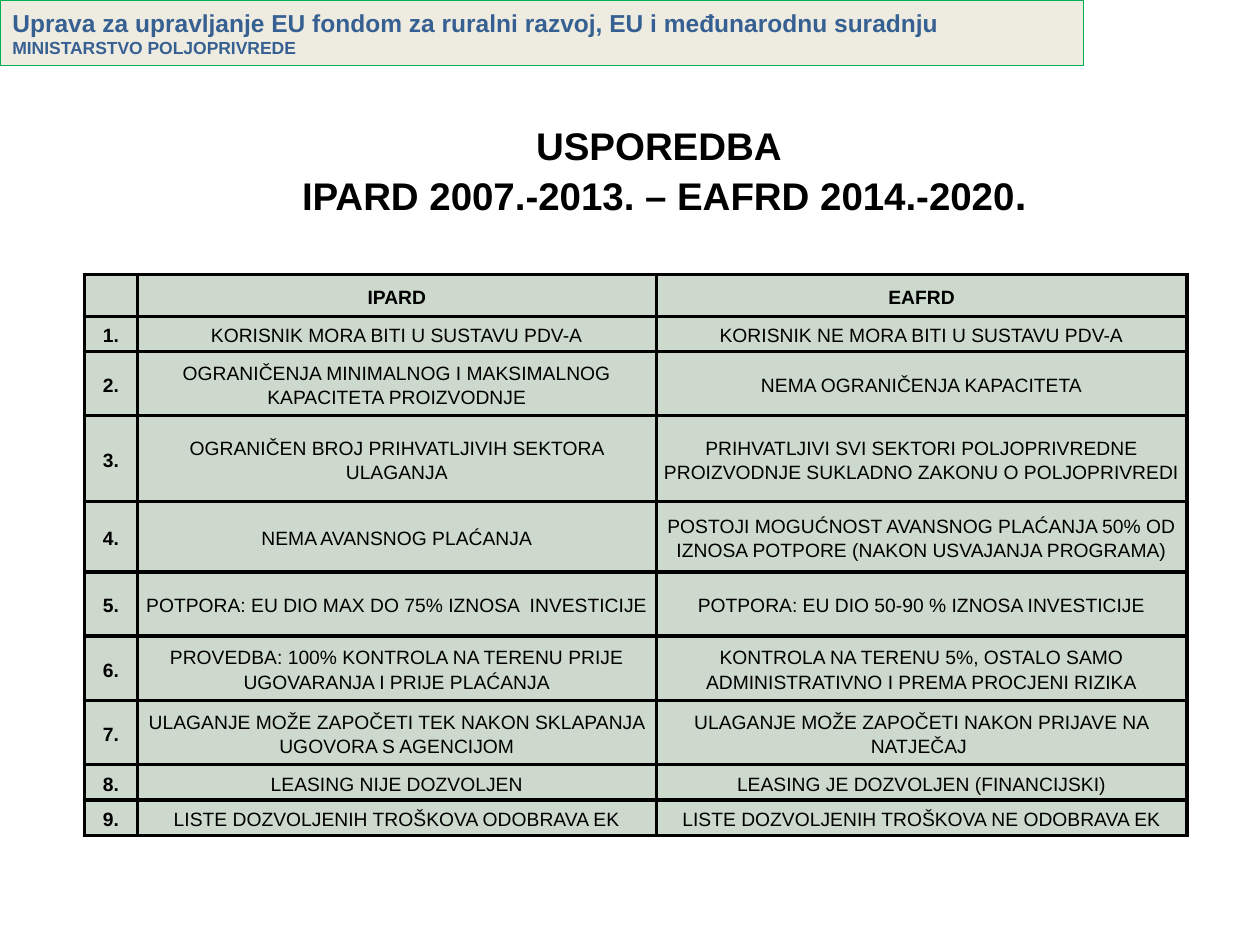
from pptx import Presentation
from pptx.dml.color import RGBColor
from pptx.enum.shapes import MSO_SHAPE
from pptx.enum.text import MSO_ANCHOR, PP_ALIGN
from pptx.oxml import parse_xml
from pptx.oxml.ns import nsdecls
from pptx.util import Inches, Pt


def color(value):
    return RGBColor.from_string(value)


def style(font, size, value, bold):
    font.name = "Arial"
    font.size = Pt(size)
    font.bold = bold
    font.color.rgb = color(value)


prs = Presentation()
prs.slide_width = Inches(10)
prs.slide_height = Inches(7.5)
slide = prs.slides.add_slide(prs.slide_layouts[6])

banner = slide.shapes.add_shape(MSO_SHAPE.RECTANGLE, 0, 0, Inches(8.6), Inches(0.52))
banner.shadow.inherit = False
banner.fill.solid()
banner.fill.fore_color.rgb = color("EEECE1")
banner.line.color.rgb = color("00B050")
banner.line.width = Pt(0.75)
banner.text_frame.vertical_anchor = MSO_ANCHOR.MIDDLE
banner.text_frame.text = (
    "Uprava za upravljanje EU fondom za ruralni razvoj, EU i međunarodnu suradnju\n"
    "MINISTARSTVO POLJOPRIVREDE"
)
for paragraph, size in zip(banner.text_frame.paragraphs, (14, 10)):
    paragraph.alignment = PP_ALIGN.LEFT
    style(paragraph.font, size, "376092", True)

title = slide.shapes.add_textbox(Inches(1.61), Inches(0.92), Inches(7.24), Inches(0.88))
title.text_frame.word_wrap = True
heading = title.text_frame.paragraphs[0]
heading.alignment = PP_ALIGN.CENTER
style(heading.font, 24, "000000", True)
first_line = heading.add_run()
first_line.text = "USPOREDBA"
heading.add_line_break()
second_line = heading.add_run()
second_line.text = " IPARD 2007.-2013. – EAFRD 2014.-2020"
for run in (first_line, second_line):
    run.font.size = Pt(22)
heading.add_run().text = "."

comparison = [
    ("IPARD", "EAFRD"),
    ("KORISNIK MORA BITI U SUSTAVU PDV-A", "KORISNIK NE MORA BITI U SUSTAVU PDV-A"),
    ("OGRANIČENJA MINIMALNOG I MAKSIMALNOG KAPACITETA PROIZVODNJE",
     "NEMA OGRANIČENJA KAPACITETA"),
    ("OGRANIČEN BROJ PRIHVATLJIVIH SEKTORA ULAGANJA",
     "PRIHVATLJIVI SVI SEKTORI POLJOPRIVREDNE PROIZVODNJE SUKLADNO ZAKONU O POLJOPRIVREDI"),
    ("NEMA AVANSNOG PLAĆANJA",
     "POSTOJI MOGUĆNOST AVANSNOG PLAĆANJA 50% OD IZNOSA POTPORE (NAKON USVAJANJA PROGRAMA)"),
    ("POTPORA: EU DIO MAX DO 75% IZNOSA  INVESTICIJE",
     "POTPORA: EU DIO 50-90 % IZNOSA INVESTICIJE"),
    ("PROVEDBA: 100% KONTROLA NA TERENU PRIJE UGOVARANJA I PRIJE PLAĆANJA",
     "KONTROLA NA TERENU 5%, OSTALO SAMO ADMINISTRATIVNO I PREMA PROCJENI RIZIKA"),
    ("ULAGANJE MOŽE ZAPOČETI TEK NAKON SKLAPANJA UGOVORA S AGENCIJOM",
     "ULAGANJE MOŽE ZAPOČETI NAKON PRIJAVE NA NATJEČAJ "),
    ("LEASING NIJE DOZVOLJEN", "LEASING JE DOZVOLJEN (FINANCIJSKI)"),
    ("LISTE DOZVOLJENIH TROŠKOVA ODOBRAVA EK",
     "LISTE DOZVOLJENIH TROŠKOVA NE ODOBRAVA EK"),
]
column_widths = (0.42, 4.12, 4.21)
row_heights = (0.33, 0.28, 0.51, 0.68, 0.56, 0.51, 0.51, 0.51, 0.28, 0.28)

table = slide.shapes.add_table(
    len(comparison), len(column_widths),
    Inches(0.67), Inches(2.18), Inches(8.75), Inches(4.47),
).table
for column, width in zip(table.columns, column_widths):
    column.width = Inches(width)
for row, height in zip(table.rows, row_heights):
    row.height = Inches(height)

for r, programmes in enumerate(comparison):
    number = f"{r}." if r else ""
    for c, text in enumerate((number, *programmes)):
        cell = table.cell(r, c)
        cell.margin_left = cell.margin_right = cell.margin_top = Inches(0.01)
        cell.margin_bottom = 0
        cell.vertical_anchor = MSO_ANCHOR.MIDDLE
        cell.text = text
        entry = cell.text_frame.paragraphs[0]
        entry.alignment = PP_ALIGN.CENTER
        entry.line_spacing = 1.15
        if c == 0 and r >= 4:
            entry.space_after = Pt(10)
        style(entry.font, 11, "000000", r == 0 or c == 0)
        properties = cell._tc.get_or_add_tcPr()
        for side in ("lnL", "lnR", "lnT", "lnB"):
            properties.append(parse_xml(
                f'<a:{side} {nsdecls("a")} w="{Pt(2.25)}"><a:solidFill>'
                f'<a:srgbClr val="000000"/></a:solidFill></a:{side}>'
            ))
        cell.fill.solid()
        cell.fill.fore_color.rgb = color("CCD9CC")

prs.save("out.pptx")
